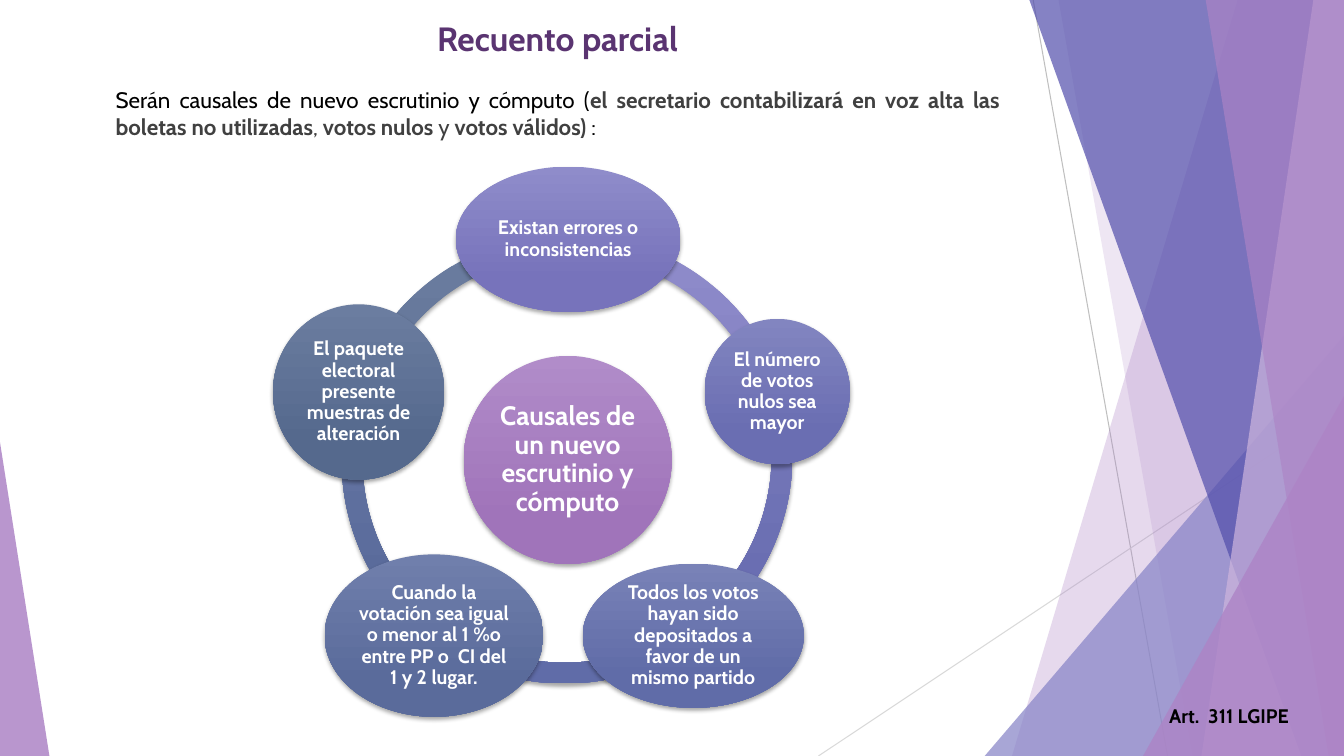
from dataclasses import dataclass

from lxml import etree
from pptx import Presentation, util as u
from pptx.dml.color import RGBColor
from pptx.enum import shapes, text
from pptx.oxml import ns


@dataclass(frozen=True)
class Theme:
    font: str = "Cabin"
    title: str = "5A3471"
    body: str = "404040"
    black: str = "000000"
    white: str = "FFFFFF"
    lilac: str = "AD84C6"
    pale_lilac: str = "CEB5DD"
    periwinkle: str = "8784C7"
    indigo: str = "524EAB"
    line_dark: str = "BFBFBF"
    line_light: str = "D9D9D9"
    hub: tuple = ("B18CC9", "A074BA")
    violet: tuple = ("8F8CCA", "7773BB")
    blue_violet: tuple = ("8285C0", "6A6EB2")
    blue: tuple = ("7982B7", "606CA8")
    steel: tuple = ("707FAC", "5A6B9B")
    slate: tuple = ("6B7DA0", "55698D")
    title_size: int = 24
    hub_size: int = 19
    body_size: int = 16
    small_size: int = 14


theme = Theme()
WIDTH, HEIGHT = 960, 540

presentation = Presentation()
presentation.slide_width, presentation.slide_height = u.Pt(WIDTH), u.Pt(HEIGHT)
slide = presentation.slides.add_slide(presentation.slide_layouts[6])


def style_font(font, size, color, bold):
    font.name, font.size, font.bold = theme.font, u.Pt(size), bold
    font.color.rgb = RGBColor.from_string(color)


def add_glossy(kind, box, colors):
    """Add a shape with a vertical gradient and a soft shadow below it."""
    shape = slide.shapes.add_shape(kind, *map(u.Pt, box))
    shape.fill.gradient()
    shape.fill.gradient_angle = 270
    for stop, color, position in zip(shape.fill.gradient_stops, colors, (0, 0.78)):
        stop.color.rgb = RGBColor.from_string(color)
        stop.position = position
    shape.line.fill.background()
    shape.shadow.inherit = False
    effects = shape._element.spPr.find(ns.qn("a:effectLst"))
    shadow = etree.SubElement(
        effects, ns.qn("a:outerShdw"), blurRad=str(u.Pt(3)), dist=str(u.Pt(2)),
        dir="5400000", algn="ctr", rotWithShape="0")
    tint = etree.SubElement(shadow, ns.qn("a:srgbClr"), val=theme.black)
    etree.SubElement(tint, ns.qn("a:alpha"), val="35000")
    return shape


# Thin background lines
for ends, color in (
    ((738, 0, 834, HEIGHT), theme.line_dark),
    ((WIDTH, 290, 584.6, HEIGHT), theme.line_light),
):
    line = slide.shapes.add_connector(shapes.MSO_CONNECTOR.STRAIGHT, *map(u.Pt, ends))
    line.line.color.rgb = RGBColor.from_string(color)
    line.line.width = u.Pt(0.75)
    etree.SubElement(line._element.spPr, ns.qn("a:effectLst"))

# Translucent facets: a band is (top x, bottom x) and runs to the right edge,
# a triangle is (left, top, width, apex) and stands on the bottom edge
facets = (
    ((884.2, 722.9), theme.lilac, 30),
    ((756, 851.8), theme.lilac, 20),
    ((703.4, 239.8, 256.6, 1), theme.periwinkle, 72),
    ((735.1, 929.5), theme.indigo, 70),
    ((938.2, 858.2), theme.pale_lilac, 70),
    ((861.1, 949), theme.lilac, 65),
    ((816.5, 283, 143.5, 1), theme.lilac, 80),
    ((0, 316, 35.3, 0), theme.lilac, 85),
)
for geometry, color, opacity in facets:
    if len(geometry) == 2:
        top_x, bottom_x = geometry
        builder = slide.shapes.build_freeform(u.Pt(top_x), u.Pt(-0.6))
        corners = ((WIDTH, -0.6), (WIDTH, HEIGHT), (bottom_x, HEIGHT))
        builder.add_line_segments([(u.Pt(x), u.Pt(y)) for x, y in corners], close=True)
        facet = builder.convert_to_shape()
    else:
        left, top, width, apex = geometry
        facet = slide.shapes.add_shape(
            shapes.MSO_SHAPE.ISOSCELES_TRIANGLE,
            *map(u.Pt, (left, top, width, HEIGHT - top)))
        facet.adjustments[0] = apex
    facet.fill.solid()
    facet.fill.fore_color.rgb = RGBColor.from_string(color)
    tint = facet._element.spPr.find(ns.qn("a:solidFill"))[0]
    etree.SubElement(tint, ns.qn("a:alpha"), val=str(opacity * 1000))
    facet.line.fill.background()
    facet.shadow.inherit = False

# Title, introduction and legal reference
center, justify, start = (
    text.PP_ALIGN.CENTER, text.PP_ALIGN.JUSTIFY, text.PP_ALIGN.LEFT)
introduction = (
    ("Serán causales de nuevo escrutinio y cómputo (", theme.black, False),
    ("el secretario contabilizará en voz alta las boletas no utilizadas",
     theme.body, True),
    (", ", theme.body, False),
    ("votos nulos ", theme.body, True),
    ("y ", theme.body, False),
    ("votos válidos)", theme.body, True),
    (" :", theme.black, False),
)
text_boxes = (
    ((75.6, 58.3, 645.8, 47.5), justify, theme.body_size, 10, introduction),
    ((828, 499, 132, 24.5), start, theme.small_size, 0,
     (("Art.  311 LGIPE", theme.black, True),)),
    ((133.2, 9.4, 530, 36), center, theme.title_size, 0,
     (("Recuento parcial", theme.title, True),)),
)
for box, alignment, size, space_before, runs in text_boxes:
    frame = slide.shapes.add_textbox(*map(u.Pt, box)).text_frame
    frame.word_wrap = True
    paragraph = frame.paragraphs[0]
    paragraph.alignment = alignment
    paragraph.space_before = u.Pt(space_before)
    for wording, color, bold in runs:
        run = paragraph.add_run()
        run.text = wording
        style_font(run.font, size, color, bold)

# Causes, clockwise from the top: wording, ellipse, colours,
# then the left, top, start and end angle of the arc that follows
causes = (
    ("Existan errores o inconsistencias",
     (325.6, 119, 160.6, 103.8), theme.violet, (244.8, 167, 270, 342)),
    ("El número de votos nulos sea mayor",
     (503.3, 227.8, 103.8, 103.8), theme.blue_violet, (243.4, 164.2, 343.14, 54.92)),
    ("Todos los votos hayan sido depositados a favor de un mismo partido",
     (416.2, 402.6, 158, 103), theme.blue, (241.9, 165.6, 54, 126)),
    ("Cuando la votación sea igual o menor al 1 %o entre PP o  CI del 1 y 2 lugar.",
     (231.8, 396, 156.4, 116), theme.steel, (244.1, 167.8, 127.28, 198.22)),
    ("El paquete electoral presente muestras de alteración",
     (195, 217.4, 122.4, 125.3), theme.slate, (244.8, 167, 198, 270)),
)
RING = 322.6
DEGREE = 0.6  # adjustment units per degree

# Ring of arcs
for _, _, colors, (left, top, first, last) in reversed(causes):
    arc = add_glossy(shapes.MSO_SHAPE.BLOCK_ARC, (left, top, RING, RING), colors)
    for index, value in enumerate((first * DEGREE, last * DEGREE, 0.046)):
        arc.adjustments[index] = value

# Hub and causes
hub = ("Causales de un nuevo escrutinio y cómputo",
       (331.2, 254.2, 148.6, 148.6), theme.hub, theme.hub_size, 1.9)
bubbles = [hub] + [(*cause[:3], theme.small_size, 1.4) for cause in causes]
for wording, box, colors, size, margin in bubbles:
    bubble = add_glossy(shapes.MSO_SHAPE.OVAL, box, colors)
    frame = bubble.text_frame
    frame.word_wrap = True
    frame.vertical_anchor = text.MSO_ANCHOR.MIDDLE
    frame.margin_left = frame.margin_right = u.Pt(margin)
    frame.margin_top = frame.margin_bottom = u.Pt(margin)
    paragraph = frame.paragraphs[0]
    paragraph.text = wording
    paragraph.alignment = center
    paragraph.line_spacing = 0.9
    style_font(paragraph.font, size, theme.white, True)

presentation.save("out.pptx")
